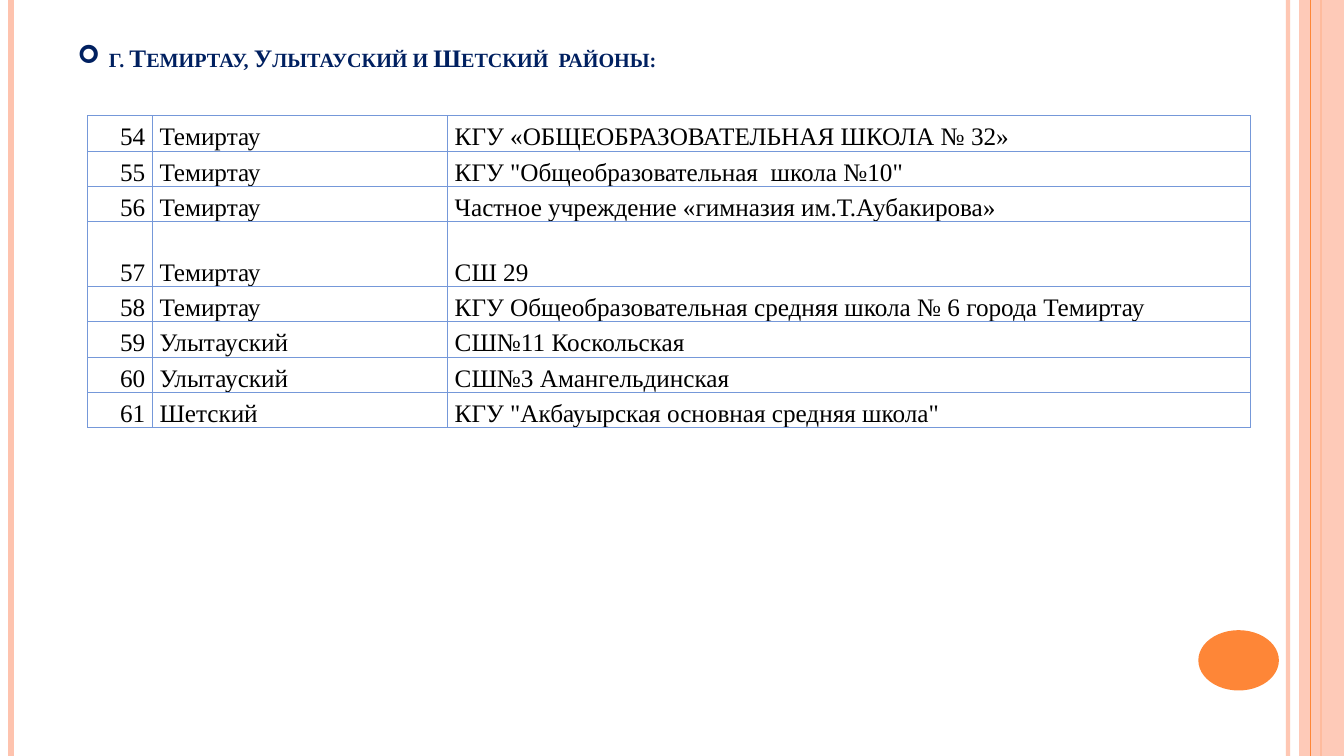
from dataclasses import dataclass

from lxml import etree
from pptx import Presentation
from pptx.dml.color import RGBColor
from pptx.enum import shapes, text
from pptx.oxml import ns
from pptx.util import Cm, Pt


@dataclass(frozen=True)
class Theme:
    font: str = "Times New Roman"
    size: int = 18
    title: str = "002060"
    body: str = "000000"
    accent: str = "FE8637"
    pale: str = "FEC3AE"
    border: str = "7598D9"


theme = Theme()
SCHOOLS = [
    (54, "Темиртау", "КГУ «ОБЩЕОБРАЗОВАТЕЛЬНАЯ ШКОЛА № 32»"),
    (55, "Темиртау", 'КГУ "Общеобразовательная  школа №10"'),
    (56, "Темиртау", "Частное учреждение «гимназия им.Т.Аубакирова»"),
    (57, "Темиртау", "СШ 29"),
    (58, "Темиртау", "КГУ Общеобразовательная средняя школа № 6 города Темиртау"),
    (59, "Улытауский", "СШ№11 Коскольская"),
    (60, "Улытауский", "СШ№3 Амангельдинская"),
    (61, "Шетский", 'КГУ "Акбауырская основная средняя школа"'),
]
TALL_ROW = 3


def add_element(parent, tag, **attributes):
    element = etree.SubElement(parent, ns.qn(tag))
    for name, value in attributes.items():
        element.set(name, str(value))
    return element


def format_run(run, color, bold=False):
    values = {"name": theme.font, "size": Pt(theme.size), "bold": bold}
    for name, value in values.items():
        setattr(run.font, name, value)
    run.font.color.rgb = RGBColor.from_string(color)


presentation = Presentation()
presentation.slide_width, presentation.slide_height = Cm(33.87), Cm(19.05)
slide = presentation.slides.add_slide(presentation.slide_layouts[5])

# Side stripes: left, width in points, colour, opacity in percent
band = slide.shapes.add_shape(
    shapes.MSO_SHAPE.RECTANGLE, Cm(32.74), 0, Cm(1.13), presentation.slide_height
)
ellipse = slide.shapes.add_shape(
    shapes.MSO_SHAPE.OVAL, Cm(30.2), Cm(15.88), Cm(2.03), Cm(1.52)
)
for shape, color in ((band, theme.pale), (ellipse, theme.accent)):
    shape.shadow.inherit = False
    shape.fill.solid()
    shape.fill.fore_color.rgb = RGBColor.from_string(color)
    shape.line.fill.background()
band_color = band._element.spPr.find(ns.qn("a:solidFill"))[0]
add_element(band_color, "a:alpha", val=87000)

for left, width, color, opacity in (
    (32.46, 3, theme.pale, 93),
    (0.28, 4.5, theme.pale, 100),
    (33.3, 1.5, theme.accent, 100),
    (33.02, 0.75, theme.accent, 100),
):
    stripe = slide.shapes.add_connector(
        shapes.MSO_CONNECTOR.STRAIGHT, Cm(left), 0, Cm(left), presentation.slide_height
    )
    stripe.line.width = Pt(width)
    stripe.line.color.rgb = RGBColor.from_string(color)
    properties = stripe._element.spPr
    add_element(properties, "a:effectLst")
    if opacity < 100:
        stripe_color = properties.find(ns.qn("a:ln")).find(ns.qn("a:solidFill"))[0]
        add_element(stripe_color, "a:alpha", val=opacity * 1000)
    if left == 33.3:
        band._element.addprevious(stripe._element)

# Title
title = slide.shapes.title
title.left, title.top, title.width, title.height = Cm(1.7), Cm(0.76), Cm(27.66), Cm(1.19)
frame_format = {
    "auto_size": text.MSO_AUTO_SIZE.NONE,
    "vertical_anchor": text.MSO_ANCHOR.BOTTOM,
    "word_wrap": True,
}
for name, value in frame_format.items():
    setattr(title.text_frame, name, value)
paragraph = title.text_frame.paragraphs[0]
paragraph.alignment = text.PP_ALIGN.LEFT
run = paragraph.add_run()
run.text = "г. Темиртау, Улытауский и Шетский  районы:"
format_run(run, theme.title, bold=True)
run.font._element.set("cap", "small")
paragraph_properties = paragraph._p.get_or_add_pPr()
paragraph_properties.set("marL", str(Cm(0.79)))
paragraph_properties.set("indent", str(-Cm(0.79)))
add_element(paragraph_properties, "a:buFont", typeface="Wingdings")
add_element(paragraph_properties, "a:buChar", char="➢")

# Table of schools
table = slide.shapes.add_table(
    len(SCHOOLS), 3, Cm(2.21), Cm(2.92), Cm(29.31), Cm(7.87)
).table
table.first_row = table.horz_banding = False
for column, width in zip(table.columns, (1.63, 7.44, 20.24)):
    column.width = Cm(width)
cell_format = {
    "vertical_anchor": text.MSO_ANCHOR.BOTTOM,
    "margin_left": Cm(0.18),
    "margin_right": Cm(0.18),
    "margin_top": 0,
    "margin_bottom": 0,
}
for row_index, school in enumerate(SCHOOLS):
    table.rows[row_index].height = Cm(1.63 if row_index == TALL_ROW else 0.89)
    for column_index, value in enumerate(school):
        cell = table.cell(row_index, column_index)
        for name, setting in cell_format.items():
            setattr(cell, name, setting)
        paragraph = cell.text_frame.paragraphs[0]
        paragraph.line_spacing = 1.15
        paragraph.alignment = (
            text.PP_ALIGN.RIGHT if column_index == 0 else text.PP_ALIGN.LEFT
        )
        run = paragraph.add_run()
        run.text = str(value)
        format_run(run, theme.body)
        cell_properties = cell._tc.get_or_add_tcPr()
        for side in ("a:lnL", "a:lnR", "a:lnT", "a:lnB"):
            border = add_element(cell_properties, side, w=Pt(1))
            border_fill = add_element(border, "a:solidFill")
            add_element(border_fill, "a:srgbClr", val=theme.border)
        add_element(cell_properties, "a:noFill")

presentation.save("out.pptx")
